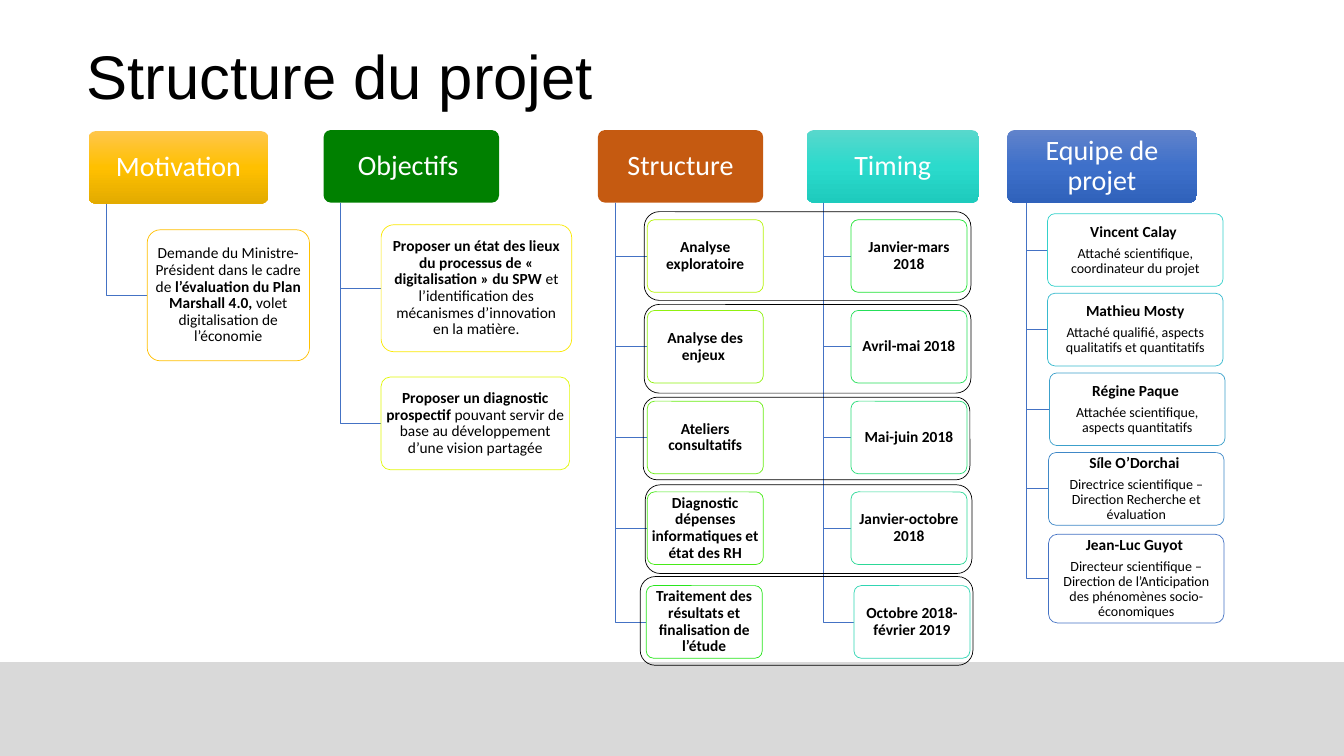
"""Build the project structure slide: five trees of cards over a grey band."""
from copy import deepcopy
from dataclasses import dataclass

from lxml import etree
from pptx import Presentation
from pptx.dml.color import RGBColor
from pptx.enum.shapes import MSO_SHAPE
from pptx.enum.text import MSO_ANCHOR, PP_ALIGN
from pptx.oxml.ns import qn
from pptx.util import Inches, Pt

RECT = MSO_SHAPE.RECTANGLE
ROUND = MSO_SHAPE.ROUNDED_RECTANGLE
MIDDLE = MSO_ANCHOR.MIDDLE
CENTER = PP_ALIGN.CENTER

COLORS = {
    "black": "000000", "white": "FFFFFF", "grey": "D9D9D9", "blue": "4472C4",
    "green": "008000", "rust": "C55A11", "gold": "FFC000", "yellow": "FBE804",
    "lemon": "E2F808", "lime 1": "B7F40C", "lime 2": "90F110",
    "lime 3": "6BED14", "lime 4": "48EA18", "lime 5": "28E61D",
    "mint 1": "21E336", "mint 2": "25DF59", "mint 3": "29DC79",
    "mint 4": "2CD897", "mint 5": "30D5B3", "sky 1": "34D1CB",
    "sky 2": "38BACE", "sky 3": "3CA0CB", "sky 4": "4088C7",
    "gold top": "FFC64B", "gold end": "E3AB00",
    "teal top": "58D8CC", "teal mid": "2BDACC", "teal end": "1ECBBD",
    "navy top": "6183CB", "navy mid": "3E70CA", "navy end": "3062BB",
}
CARD_H = 0.72
ROWS = [2.18 + 0.9 * i for i in range(4)] + [5.81]
STAFF = [2.12 + 0.79 * i for i in range(4)] + [5.3]


@dataclass
class Run:
    text: str
    bold: bool = False
    size: float = 11
    color: str = "black"
    font: str = "Calibri"


@dataclass
class Box:
    left: float
    top: float
    width: float
    height: float
    fill: tuple[str, ...] = ()
    line: str = ""
    paras: tuple[tuple[Run, ...], ...] = ()
    round: float = 0.1
    alpha: int = 100
    inset: float = 0.02
    kind: int = ROUND


@dataclass
class Tree:
    head: Box
    stem: float
    cards: list[Box]


def rgb(name: str) -> RGBColor:
    return RGBColor.from_string(COLORS[name])


def apply(item, values: dict) -> None:
    for key, value in values.items():
        setattr(item, key, value)


def write(para, runs: tuple[Run, ...]) -> None:
    for run in runs:
        part = para.add_run()
        part.text = run.text
        apply(part.font, {"name": run.font, "size": Pt(run.size), "bold": run.bold})
        part.font.color.rgb = rgb(run.color)


def paint(shape, names: tuple[str, ...], alpha: int) -> None:
    fill = shape.fill
    if not names:
        fill.background()
    elif len(names) == 1:
        fill.solid()
        fill.fore_color.rgb = rgb(names[0])
        if alpha < 100:
            tone = shape._element.spPr.find(qn("a:solidFill"))[0]
            etree.SubElement(tone, qn("a:alpha")).set("val", str(alpha * 1000))
    else:
        fill.gradient()
        fill.gradient_angle = 270
        stops = shape._element.spPr.find(qn("a:gradFill")).find(qn("a:gsLst"))
        stops.append(deepcopy(stops[-1]))
        for i, (stop, name) in enumerate(zip(fill.gradient_stops, names)):
            stop.color.rgb = rgb(name)
            stop.position = i / (len(names) - 1)


def edge(shape, name: str) -> None:
    if name:
        shape.line.color.rgb = rgb(name)
        shape.line.width = Pt(0.5)
    else:
        shape.line.fill.background()


def draw(shapes, box: Box) -> None:
    shape = shapes.add_shape(box.kind, *map(Inches, (box.left, box.top, box.width, box.height)))
    shape.shadow.inherit = False
    if box.kind == ROUND:
        shape.adjustments[0] = box.round
    paint(shape, box.fill, box.alpha)
    edge(shape, box.line)
    frame = shape.text_frame
    pad = Inches(box.inset)
    apply(frame, {"word_wrap": True, "vertical_anchor": MIDDLE, "margin_left": pad,
                  "margin_right": pad, "margin_top": pad, "margin_bottom": pad})
    for i, runs in enumerate(box.paras):
        para = frame.add_paragraph() if i else frame.paragraphs[0]
        last = i == len(box.paras) - 1
        apply(para, {"alignment": CENTER, "line_spacing": 0.9,
                     "space_after": Pt(0 if last else 4)})
        write(para, runs)


def link(shapes, tree: Tree, card: Box) -> None:
    start = tree.head.top + tree.head.height
    mid = card.top + card.height / 2
    pen = shapes.build_freeform(Inches(tree.stem), Inches(start))
    pen.add_line_segments([(Inches(tree.stem), Inches(mid)),
                           (Inches(card.left), Inches(mid))], close=False)
    shape = pen.convert_to_shape()
    shape.shadow.inherit = False
    shape.fill.background()
    edge(shape, "blue")


def head(text: str, left: float, width: float, *fill: str, top: float = 1.29) -> Box:
    return Box(left, top, width, CARD_H, fill, paras=((Run(text, size=20, color="white"),),),
               inset=0.03)


def card(left: float, top: float, width: float, height: float, line: str,
         *paras: tuple[Run, ...]) -> Box:
    return Box(left, top, width, height, ("white",), line, paras, alpha=90)


def steps(lefts: list[float], hue: str, texts: list[str]) -> list[Box]:
    return [card(left, top, 1.15, CARD_H, f"{hue} {i}", (Run(text, True),))
            for i, (left, top, text) in enumerate(zip(lefts, ROWS, texts), 1)]


TEAM = [
    (10.39, CARD_H, "sky 1", "Vincent Calay ", "Attaché scientifique, coordinateur du projet"),
    (10.39, CARD_H, "sky 2", "Mathieu Mosty", "Attaché qualifié, aspects qualitatifs et quantitatifs"),
    (10.41, CARD_H, "sky 3", "Régine Paque ", "Attachée scientifique, aspects quantitatifs"),
    (10.4, CARD_H, "sky 4", "Síle O’Dorchai ",
     "Directrice scientifique – Direction Recherche et évaluation"),
    (10.4, 0.88, "blue", "Jean-Luc Guyot ",
     "Directeur scientifique – Direction de l’Anticipation des phénomènes socio-économiques"),
]
TREES = [
    Tree(head("Motivation", 0.88, 1.78, "gold top", "gold", "gold end", top=1.3), 1.06, [
        card(1.46, 2.28, 1.61, 1.3, "gold", (
            Run("Demande du Ministre-Président dans le cadre de "),
            Run("l’évaluation du Plan Marshall 4.0,", True),
            Run(" volet digitalisation de l’économie")))]),
    Tree(head("Objectifs ", 3.21, 1.74, "green"), 3.38, [
        card(3.78, 2.23, 1.89, 1.26, "yellow", (
            Run("Proposer un état des lieux du processus de « digitalisation » du SPW ", True),
            Run("et l’identification des mécanismes d’innovation en la matière."))),
        card(3.78, 3.74, 1.87, 0.92, "lemon", (
            Run("Proposer un diagnostic prospectif ", True),
            Run("pouvant servir de base au développement d’une vision partagée")))]),
    Tree(head("Structure", 5.93, 1.64, "rust"), 6.1, steps([6.42] * 4 + [6.41], "lime", [
        "Analyse exploratoire", "Analyse des enjeux ", "Ateliers consultatifs",
        "Diagnostic dépenses informatiques et état des RH",
        "Traitement des résultats et finalisation de l’étude"])),
    Tree(head("Timing", 8, 1.71, "teal top", "teal mid", "teal end"), 8.17,
         steps([8.44] * 4 + [8.47], "mint", [
             "Janvier-mars 2018", "Avril-mai 2018", "Mai-juin 2018",
             "Janvier-octobre 2018", "Octobre 2018-février 2019"])),
    Tree(head("Equipe de projet", 9.99, 1.88, "navy top", "navy mid", "navy end"), 10.18, [
        card(left, top, 1.74, tall, line, (Run(name, True),), (Run(role, size=10),))
        for top, (left, tall, line, name, role) in zip(STAFF, TEAM)]),
]
RINGS = [(6.39, 2.1, 3.24, 0.88), (6.39, 3.02, 3.24, 0.88), (6.38, 3.94, 3.24, 0.82),
         (6.4, 4.81, 3.24, 0.88), (6.35, 5.72, 3.3, 0.88)]


def main() -> None:
    deck = Presentation()
    apply(deck, {"slide_width": Inches(13.33), "slide_height": Inches(7.5)})
    shapes = deck.slides.add_slide(deck.slide_layouts[6]).shapes
    title = shapes.add_textbox(*map(Inches, (0.76, 0.33, 5.28, 0.84))).text_frame
    title.word_wrap = False
    write(title.paragraphs[0], (Run("Structure du projet", size=44, font="Arial"),))
    draw(shapes, Box(0, 6.57, 13.33, 0.93, ("grey",), kind=RECT))
    for tree in TREES:
        draw(shapes, tree.head)
        for leaf in tree.cards:
            link(shapes, tree, leaf)
            draw(shapes, leaf)
    for ring in RINGS:
        draw(shapes, Box(*ring, line="black", round=0.17))
    deck.save("out.pptx")


if __name__ == "__main__":
    main()
